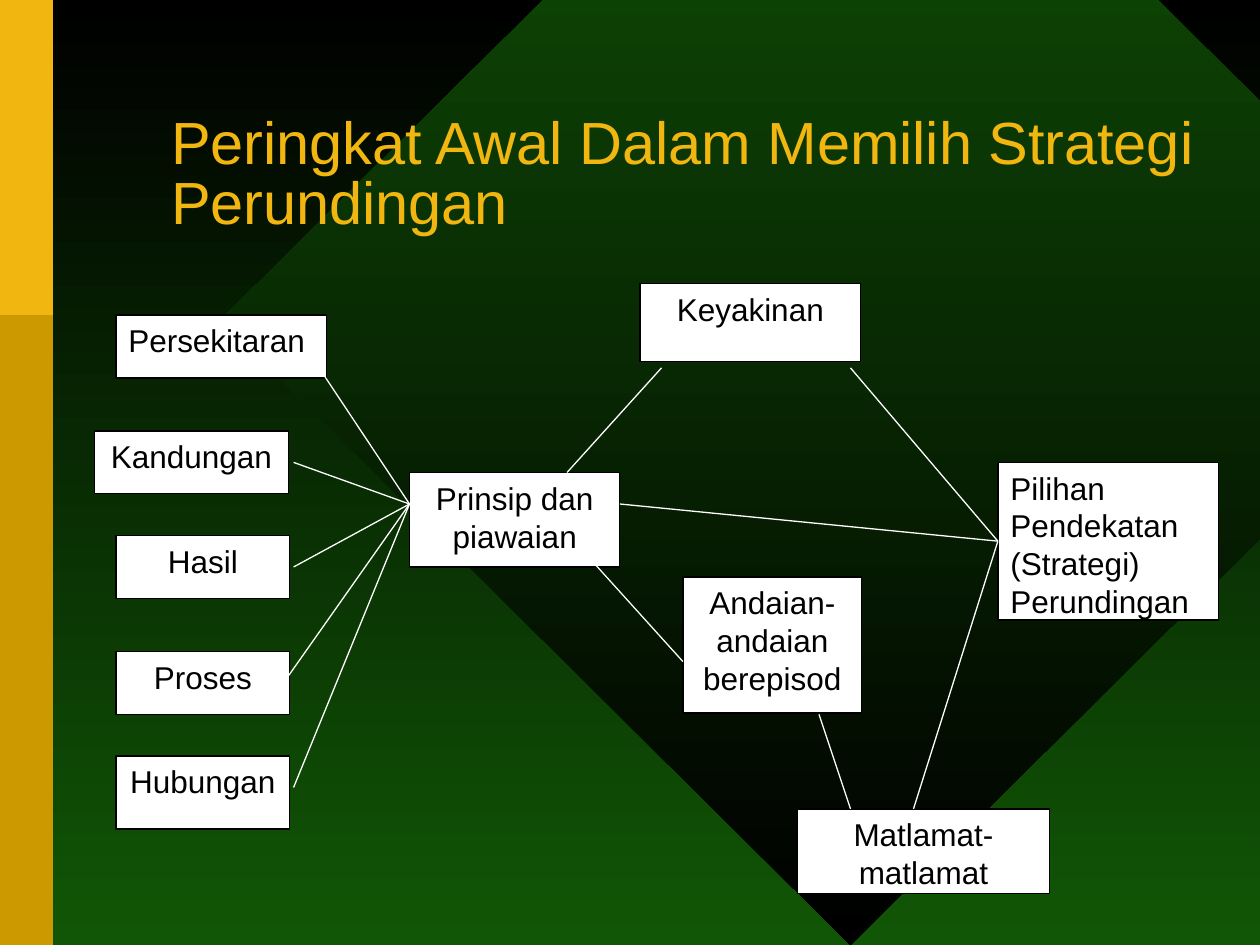
from pptx import Presentation
from pptx.dml.color import RGBColor
from pptx.enum.shapes import MSO_CONNECTOR, MSO_SHAPE
from pptx.enum.text import MSO_ANCHOR, PP_ALIGN
from pptx.util import Inches, Pt
from lxml.etree import SubElement
from pptx.oxml.ns import qn


def tint(code):
    return RGBColor.from_string(code)


class Deck:
    font = "Arial"
    ink, paper, gold, ochre, leaf = "000000", "FFFFFF", "F1B60F", "CC9900", "115606"

    def __init__(self, wide, high):
        self.show = Presentation()
        self.show.slide_width = Inches(wide)
        self.show.slide_height = Inches(high)
        self.slide = self.show.slides.add_slide(self.show.slide_layouts[6])

    def fade(self, fill, top, base):
        fill.gradient()
        fill.gradient_angle = 270
        for stop, code in zip(fill.gradient_stops, (top, base)):
            stop.color.rgb = tint(code)

    def shape(self, kind, at):
        item = self.slide.shapes.add_shape(kind, *map(Inches, at))
        item.shadow.inherit = False
        item.line.fill.background()
        return item

    def block(self, at, code):
        item = self.shape(MSO_SHAPE.RECTANGLE, at)
        item.fill.solid()
        item.fill.fore_color.rgb = tint(code)
        return item

    def label(self, item, text, size, code, align, anchor):
        frame = item.text_frame
        frame.word_wrap = True
        frame.vertical_anchor = anchor
        para = frame.paragraphs[0]
        para.text = text
        para.alignment = align
        para.font.name = self.font
        para.font.size = Pt(size)
        para.font.color.rgb = tint(code)
        return para

    def title(self, text, at):
        item = self.slide.shapes.add_textbox(*map(Inches, at))
        para = self.label(item, text, 34, self.gold, PP_ALIGN.LEFT, MSO_ANCHOR.BOTTOM)
        para.line_spacing = 0.85

    def box(self, text, at, align=PP_ALIGN.CENTER):
        item = self.block(at, self.paper)
        item.line.color.rgb = tint(self.ink)
        item.line.width = Pt(0.75)
        self.label(item, text, 18, self.ink, align, MSO_ANCHOR.TOP)
        return item

    def line(self, start, end, goal=None, side=1):
        item = self.slide.shapes.add_connector(
            MSO_CONNECTOR.STRAIGHT, *map(Inches, (*start, *end)))
        item.line.color.rgb = tint(self.paper)
        item.line.width = Pt(0.75)
        SubElement(item._element.spPr, qn("a:effectLst"))
        if goal is not None:
            item.end_connect(goal, side)


def main():
    deck = Deck(10, 7.5)
    deck.fade(deck.slide.background.fill, deck.ink, deck.leaf)
    gem = deck.shape(MSO_SHAPE.DIAMOND, (1.75, -2.42, 10, 9.92))
    deck.fade(gem.fill, deck.leaf, deck.ink)
    deck.block((0, 0, 0.42, 7.5), deck.ochre)
    deck.block((0, 0, 0.42, 2.5), deck.gold)

    deck.box("Persekitaran", (0.92, 2.5, 1.67, 0.5), PP_ALIGN.LEFT)
    for text, at in (
        ("Kandungan", (0.75, 3.42, 1.54, 0.5)),
        ("Hasil", (0.92, 4.25, 1.38, 0.5)),
        ("Proses", (0.92, 5.17, 1.38, 0.5)),
        ("Hubungan", (0.92, 6, 1.38, 0.58)),
        ("Prinsip dan piawaian", (3.25, 3.75, 1.67, 0.75)),
        ("Keyakinan", (5.08, 2.25, 1.75, 0.62)),
        ("Andaian-andaian berepisod", (5.42, 4.58, 1.42, 1.08)),
        ("Matlamat-matlamat", (6.33, 6.42, 2, 0.67)),
    ):
        deck.box(text, at)
    choice = deck.box("Pilihan Pendekatan (Strategi) Perundingan",
                      (7.92, 3.67, 1.75, 1.25), PP_ALIGN.LEFT)

    for start in ((2.42, 2.75), (2.33, 3.67), (2.33, 4.5), (2.25, 5.42), (2.33, 6.25)):
        deck.line(start, (3.25, 4))
    for start, end in (
        ((4.5, 3.75), (5.25, 2.92)),
        ((4.67, 4.42), (5.42, 5.25)),
        ((6.5, 5.67), (6.75, 6.42)),
    ):
        deck.line(start, end)
    for start in ((6.75, 2.92), (7.25, 6.42), (4.92, 4)):
        deck.line(start, (7.92, 4.25), choice)

    deck.title("Peringkat Awal Dalam Memilih Strategi Perundingan",
               (1.26, 0.68, 8.52, 1.25))
    deck.show.save("out.pptx")


if __name__ == "__main__":
    main()
